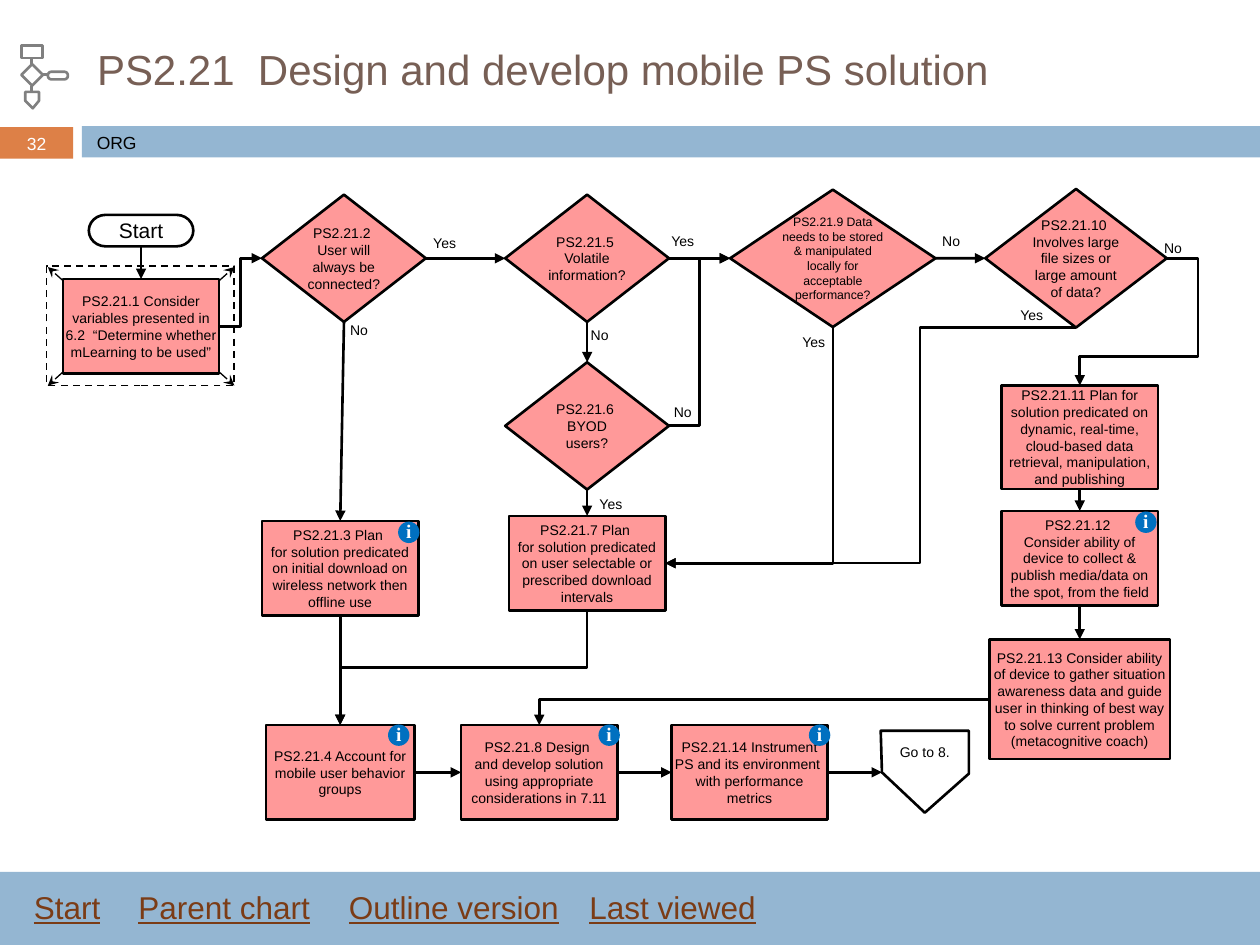
from lxml.etree import SubElement
from pptx import Presentation
from pptx.dml.color import RGBColor
from pptx.enum.dml import MSO_LINE
from pptx.enum.shapes import MSO_CONNECTOR as CONN, MSO_SHAPE as SHAPE
from pptx.enum.text import MSO_ANCHOR as ANCHOR, PP_ALIGN as ALIGN
from pptx.oxml.ns import qn
from pptx.util import Inches, Pt

BLACK = RGBColor(0x00, 0x00, 0x00)
WHITE = RGBColor(0xFF, 0xFF, 0xFF)
PINK = RGBColor(0xFF, 0x99, 0x99)
SKY = RGBColor(0x94, 0xB6, 0xD2)
ORANGE = RGBColor(0xDD, 0x80, 0x47)
GRAY = RGBColor(0x80, 0x80, 0x80)
BROWN = RGBColor(0x77, 0x5F, 0x55)
LINK = RGBColor(0x7B, 0x3C, 0x16)
INFO = RGBColor(0x00, 0x70, 0xC0)

TITLE = "PS2.21  Design and develop mobile PS solution"
TOP, MIDDLE, PLAN, BOTTOM = 2.05, 3.38, 4.47, 6.13
FIRST, SECOND, THIRD, FOURTH, FIFTH = 1.12, 2.7, 4.66, 6.61, 8.57
BOX, ASK = (1.24, 0.75), (1.3, 1.01)
SIDES = {"top": (0, 0.5, 0), "left": (1, 0, 0.5), "bottom": (2, 0.5, 1), "right": (3, 1, 0.5)}

NODES = {
    "start": (SHAPE.FLOWCHART_TERMINATOR, FIRST, 1.83, (0.83, 0.25), "Start"),
    "1": (SHAPE.RECTANGLE, FIRST, 2.59, BOX,
          "PS2.21.1 Consider variables presented in 6.2  “Determine whether mLearning to be used”"),
    "2": (SHAPE.DIAMOND, 2.73, TOP, ASK, "PS2.21.2 \nUser will always be connected?"),
    "3": (SHAPE.RECTANGLE, SECOND, 4.51, BOX,
          "PS2.21.3 Plan \nfor solution predicated on initial download on wireless network then offline use"),
    "4": (SHAPE.RECTANGLE, SECOND, BOTTOM, (1.18, 0.75),
          "PS2.21.4 Account for mobile user behavior groups"),
    "5": (SHAPE.DIAMOND, THIRD, TOP, ASK, "PS2.21.5 \nVolatile information?"),
    "6": (SHAPE.DIAMOND, THIRD, MIDDLE, ASK, "PS2.21.6 \nBYOD users?"),
    "7": (SHAPE.RECTANGLE, THIRD, PLAN, BOX,
          "PS2.21.7 Plan \nfor solution predicated on user selectable or prescribed download intervals"),
    "8": (SHAPE.RECTANGLE, 4.28, BOTTOM, BOX,
          "PS2.21.8 Design \nand develop solution using appropriate considerations in 7.11"),
    "9": (SHAPE.DIAMOND, FOURTH, TOP, (1.63, 1.09),
          "PS2.21.9 Data needs to be stored & manipulated locally for acceptable performance?"),
    "10": (SHAPE.DIAMOND, 8.54, TOP, (1.44, 1.1),
           "PS2.21.10 \nInvolves large file sizes or large amount of data?"),
    "11": (SHAPE.RECTANGLE, FIFTH, 3.47, (1.24, 0.82),
           "PS2.21.11 Plan for solution predicated on dynamic, real-time, cloud-based data "
           "retrieval, manipulation, and publishing"),
    "12": (SHAPE.RECTANGLE, FIFTH, 4.43, BOX,
           "PS2.21.12 \nConsider ability of device to collect & publish media/data on the spot, from the field"),
    "13": (SHAPE.RECTANGLE, FIFTH, 5.55, (1.43, 0.95),
           "PS2.21.13 Consider ability of device to gather situation awareness data and guide user "
           "in thinking of best way to solve current problem (metacognitive coach)"),
    "14": (SHAPE.RECTANGLE, 5.95, BOTTOM, BOX,
           "PS2.21.14 Instrument PS and its environment \nwith performance metrics"),
}
TEXT_SIZES = {"start": 12, "9": 7}
DOWN = [("start", "1"), ("2", "3"), ("3", "4"), ("5", "6"), ("6", "7"), ("11", "12"), ("12", "13")]
ACROSS = [("2", "5"), ("5", "9"), ("9", "10"), ("4", "8"), ("8", "14")]
ELBOWS = [
    ("1", "right", "2", "left", 3, [0.5], False),
    ("6", "right", "9", "left", 3, [0.5], False),
    ("9", "bottom", "7", "right", 2, [], True),
    ("10", "right", "11", "top", 4, [-0.36, 0.77], False),
    ("10", "bottom", "7", "right", 3, [0.38], False),
    ("13", "left", "8", "top", 2, [], False),
    ("7", "bottom", "4", "top", 3, [0.5], True),
]
ANSWERS = {
    "Yes": [(3.34, 1.81), (5.23, 1.8), (4.66, 3.88), (6.27, 2.6), (8, 2.38)],
    "No": [(2.68, 2.5), (5.25, 3.15), (4.59, 2.54), (7.38, 1.8), (9.14, 1.85)],
}
BADGES = [(9.01, 4.06), (3.16, 4.14), (3.08, 5.75), (4.75, 5.75), (6.42, 5.75)]
LINKS = [("Start", 0.17, 0.75), ("Parent chart", 1, 1.58),
         ("Outline version", 2.67, 1.92), ("Last viewed", 4.58, 1.52)]
BARS = [(0, 1.01, 0.58, 0.25, ORANGE), (0.65, 1, 9.35, 0.25, SKY), (0, 6.92, 10, 0.58, SKY)]
ICON = [(SHAPE.RECTANGLE, 0.17, 0.36, 0.17, 0.1), (SHAPE.DIAMOND, 0.17, 0.51, 0.17, 0.17),
        (SHAPE.FLOWCHART_TERMINATOR, 0.38, 0.57, 0.16, 0.06)]
ICON_LINES = [((0.25, 0.46), (0.25, 0.51)), ((0.25, 0.68), (0.25, 0.73)), ((0.34, 0.59), (0.38, 0.59))]
ICON_PAGE = [(0.2, 0.73), (0.31, 0.73), (0.31, 0.8), (0.26, 0.86), (0.2, 0.8)]
EXIT = [(6.99, 5.8), (7.69, 5.8), (7.69, 6.14), (7.34, 6.45), (7, 6.13)]


def write(sp, text, size, color=BLACK, align=ALIGN.CENTER, anchor=ANCHOR.MIDDLE,
          insets=(0, 0, 0, 0), wrap=True, name="Arial", **style):
    """Fill a shape with one formatted paragraph."""
    tf = sp.text_frame
    tf.word_wrap, tf.vertical_anchor = wrap, anchor
    for side, inset in zip(("left", "top", "right", "bottom"), insets):
        setattr(tf, f"margin_{side}", Inches(inset))
    p = tf.paragraphs[0]
    p.text, p.alignment = text, align
    for br in p._p.findall(qn("a:br")):
        SubElement(br, qn("a:rPr"), sz=str(size * 100))
    for r in p.runs:
        r.font.color.rgb = color
        for key, value in {"name": name, "size": Pt(size), **style}.items():
            setattr(r.font, key, value)


def paint(sp, fill=None, line=None, width=1.5):
    """Set fill and outline, and drop the shadow."""
    sp.shadow.inherit = False
    for part, color in ((sp.fill, fill), (sp.line.fill, line)):
        if color is None:
            part.background()
        else:
            part.solid()
            part.fore_color.rgb = color
    if line is not None:
        sp.line.width = Pt(width)
    return sp


def shape(s, kind, x, y, w, h, **look):
    """Add a painted preset shape."""
    return paint(s.shapes.add_shape(kind, *map(Inches, (x, y, w, h))), **look)


def outline(s, points, **look):
    """Add a painted closed polygon."""
    pts = [(Inches(x), Inches(y)) for x, y in points]
    fb = s.shapes.build_freeform(*pts[0])
    fb.add_line_segments(pts[1:], close=True)
    return paint(fb.convert_to_shape(), **look)


def label(s, text, x, y, w, h, size, **style):
    """Add a left-aligned text box."""
    options = {"align": ALIGN.LEFT, "anchor": ANCHOR.TOP, "insets": (0.1, 0.05, 0.1, 0.05), **style}
    write(s.shapes.add_textbox(*map(Inches, (x, y, w, h))), text, size, **options)


def line(s, start, end, color=BLACK, width=1.5, head="triangle", kind=CONN.STRAIGHT):
    """Add a connector, with an arrowhead at its end if one is named."""
    c = s.shapes.add_connector(kind, *map(Inches, (*start, *end)))
    c.line.color.rgb, c.line.width = color, Pt(width)
    pr = c.element.spPr
    if head:
        SubElement(pr.find(qn("a:ln")), qn("a:tailEnd"), type=head)
    SubElement(pr, qn("a:effectLst"))
    return c


def port(name, side):
    """Return the point at the middle of a node's side."""
    _, cx, cy, (w, h), _ = NODES[name]
    _, fx, fy = SIDES[side]
    return cx + (fx - 0.5) * w, cy + (fy - 0.5) * h


def elbow(s, start, end, bends, adjust, down_first):
    """Add a bent connector, turned a quarter when it leaves downwards."""
    if down_first:
        (x1, y1), (x2, y2) = start, end
        cx, cy, w, h = (x1 + x2) / 2, (y1 + y2) / 2, y2 - y1, x1 - x2
        start, end = (cx - w / 2, cy - h / 2), (cx + w / 2, cy + h / 2)
    pr = line(s, start, end, kind=CONN.ELBOW).element.spPr
    if down_first:
        pr.find(qn("a:xfrm")).set("rot", "5400000")
    geom = pr.find(qn("a:prstGeom"))
    geom.set("prst", f"bentConnector{bends}")
    guides = geom.find(qn("a:avLst"))
    if guides is None:
        guides = SubElement(geom, qn("a:avLst"))
    for i, share in enumerate(adjust, 1):
        SubElement(guides, qn("a:gd"), name=f"adj{i}", fmla=f"val {round(share * 100000)}")


def main():
    """Build the flowchart slide."""
    prs = Presentation()
    prs.slide_width, prs.slide_height = Inches(10), Inches(7.5)
    s = prs.slides.add_slide(prs.slide_layouts[5])
    title = s.shapes.title
    title.left, title.top, title.width, title.height = map(Inches, (0.67, 0.08, 9.08, 0.93))
    write(title, TITLE, 24, BROWN, ALIGN.LEFT, insets=(0.1, 0.05, 0.1, 0.05))

    bars = [shape(s, SHAPE.RECTANGLE, *box, fill=color) for *box, color in BARS]
    write(bars[0], "32", 10, WHITE)
    label(s, "ORG", 0.67, 1, 9.08, 0.27, 10, anchor=ANCHOR.MIDDLE)
    for part in ICON:
        shape(s, *part, fill=WHITE, line=GRAY)
    outline(s, ICON_PAGE, fill=WHITE, line=GRAY)
    for ends in ICON_LINES:
        line(s, *ends, color=GRAY, head=None)

    frame = shape(s, SHAPE.RECTANGLE, 0.37, 2.11, 1.49, 0.95, line=BLACK, width=1)
    frame.line.dash_style = MSO_LINE.DASH
    for dx in (-1, 1):
        for dy in (-1, 1):
            line(s, (FIRST + dx * 0.55, 2.59 + dy * 0.3), (FIRST + dx * 0.74, 2.59 + dy * 0.47),
                 width=0.75, head="stealth")

    for a, out, b, into, *route in ELBOWS:
        elbow(s, port(a, out), port(b, into), *route)
    nodes = {}
    for name, (kind, cx, cy, (w, h), text) in NODES.items():
        fill = WHITE if name == "start" else PINK
        nodes[name] = shape(s, kind, cx - w / 2, cy - h / 2, w, h, fill=fill, line=BLACK)
        write(nodes[name], text, TEXT_SIZES.get(name, 8))
    for pairs, out, into in ((DOWN, "bottom", "top"), (ACROSS, "right", "left")):
        for a, b in pairs:
            c = line(s, port(a, out), port(b, into))
            c.begin_connect(nodes[a], SIDES[out][0])
            c.end_connect(nodes[b], SIDES[into][0])
    write(outline(s, EXIT, fill=WHITE, line=BLACK), "Go to 8.", 8,
          anchor=ANCHOR.TOP, insets=(0, 0.1, 0, 0))
    line(s, port("14", "right"), EXIT[-1])

    for answer, spots in ANSWERS.items():
        for x, y in spots:
            label(s, answer, x, y, 0.44, 0.24, 8)
    for x, y in BADGES:
        badge = shape(s, SHAPE.OVAL, x, y, 0.17, 0.17, fill=INFO)
        write(badge, "i", 11, WHITE, insets=(0.1, 0.05, 0.1, 0.07), wrap=False,
              name="Times New Roman", bold=True)
    for text, x, w in LINKS:
        label(s, text, x, 7, w, 0.4, 18, color=LINK, underline=True)
    prs.save("out.pptx")


if __name__ == "__main__":
    main()
